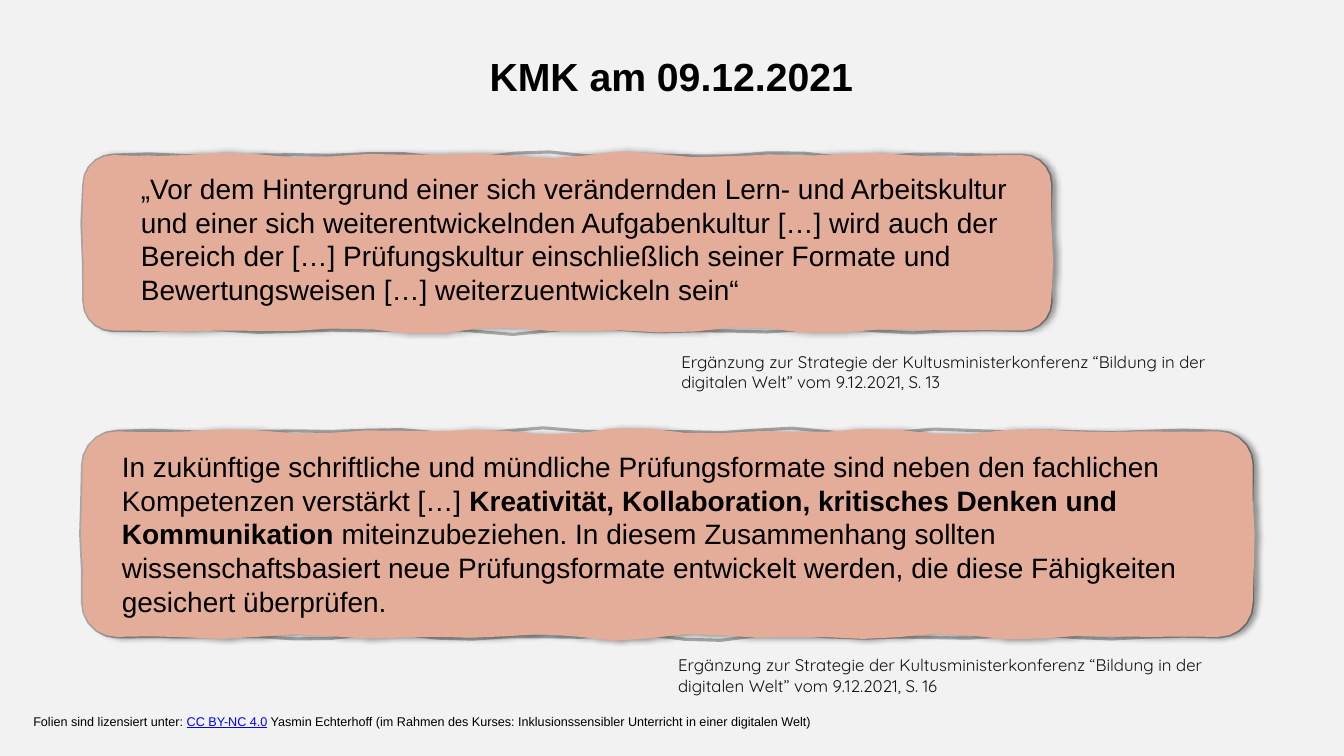
import math
from pptx import Presentation
from pptx import util as u
from pptx.dml.color import RGBColor
from pptx.enum import text
from pptx.oxml import parse_xml
from pptx.oxml.ns import nsdecls

COLORS = {"bg": "F2F2F2", "panel": "E3AD99", "edge": "A7A7A7",
          "ink": "000000", "source": "111111", "link": "0000FF"}

PANELS = [(2.11, 3.91, 24.38, 4.42), (2.08, 10.87, 29.49, 5.18)]
WOBBLES = {"edge": 0.4, "panel": 2.3}
EDGE_STEP = 0.9
ARC_STEPS = 5

FORMATS = {
    "title": {"name": "Arial", "size": u.Pt(28), "bold": True},
    "quote": {"name": "Arial", "size": u.Pt(20)},
    "source": {"name": "Quicksand", "size": u.Pt(12)},
    "license": {"name": "Arial", "size": u.Pt(9)},
}
INSETS = {"title": (0.25, 0.25), "license": (0, 0)}
DEFAULT_INSETS = (0.25, 0.13)
SOURCE = ("Ergänzung zur Strategie der Kultusministerkonferenz “Bildung in der "
          "digitalen Welt” vom 9.12.2021, S. ")

TEXTS = [
    ("title", (5.36, 1.07, 23.11, 2.01), [("KMK am 09.12.2021", "ink", {})]),
    ("quote", (3.3, 4.19, 22.45, 3.68), [
        ("„Vor dem Hintergrund einer sich verändernden Lern- und Arbeitskultur "
         "und einer sich weiterentwickelnden Aufgabenkultur […] wird auch der "
         "Bereich der […] Prüfungskultur einschließlich seiner Formate und "
         "Bewertungsweisen […] weiterzuentwickeln sein“", "ink", {})]),
    ("source", (16.92, 8.74, 15.16, 1.27), [(SOURCE + "13", "source", {})]),
    ("quote", (2.82, 11.2, 28.19, 4.52), [
        ("In zukünftige schriftliche und mündliche Prüfungsformate sind neben "
         "den fachlichen Kompetenzen verstärkt […] ", "ink", {}),
        ("Kreativität, Kollaboration, kritisches Denken und Kommunikation",
         "ink", {"bold": True}),
        (" miteinzubeziehen. In diesem Zusammenhang sollten "
         "wissenschaftsbasiert neue Prüfungsformate entwickelt werden, die "
         "diese Fähigkeiten gesichert überprüfen.", "ink", {})]),
    ("source", (16.84, 16.38, 15.16, 1.27), [(SOURCE + "16", "source", {})]),
    ("license", (0.84, 17.98, 28.63, 0.38), [
        ("Folien sind lizensiert unter: ", "ink", {}),
        ("CC BY-NC 4.0", "link", {"underline": True}),
        (" Yasmin Echterhoff (im Rahmen des Kurses: Inklusionssensibler "
         "Unterricht in einer digitalen Welt)", "ink", {})]),
]


def rgb(key):
    return RGBColor.from_string(COLORS[key])


def wobble(s, length, phase):
    taper = math.sin(math.pi * s / length) ** 0.5
    return 0.05 * taper * (math.sin(1.9 * s + phase) + math.sin(1.2 * s + 2 * phase))


def outline(left, top, width, height, phase):
    radius = height / 6
    right, bottom = left + width - radius, top + height - radius
    left, top = left + radius, top + radius
    points = []
    for side, (cx, cy) in enumerate([(right, top), (right, bottom),
                                     (left, bottom), (left, top)]):
        angle = math.pi / 2 * (side - 1)
        nx, ny = math.cos(angle), math.sin(angle)
        length = bottom - top if side % 2 else right - left
        steps = round(length / EDGE_STEP)
        for i in range(1, steps):
            s = length * i / steps
            out = radius + wobble(s, length, phase + side)
            points.append((cx + nx * out + ny * (length - s),
                           cy + ny * out - nx * (length - s)))
        for i in range(ARC_STEPS + 1):
            a = angle + math.pi / 2 * i / ARC_STEPS
            points.append((cx + radius * math.cos(a), cy + radius * math.sin(a)))
    return [(u.Cm(x), u.Cm(y)) for x, y in points]


def add_panel(slide, box, layer, phase):
    points = outline(*box, phase)
    builder = slide.shapes.build_freeform(*points[0])
    builder.add_line_segments(points[1:], close=True)
    sp = builder.convert_to_shape()
    sp.shadow.inherit = False
    if layer == "edge":
        sp.fill.background()
        sp.line.color.rgb = rgb("edge")
        sp.line.width = u.Pt(2.25)
    else:
        sp.fill.solid()
        sp.fill.fore_color.rgb = rgb("panel")
        sp.line.fill.background()
        effects = sp._element.spPr.find("{*}effectLst")
        effects.append(parse_xml(
            f'<a:outerShdw {nsdecls("a")} blurRad="{u.Pt(4)}" dist="{u.Pt(3)}" '
            'dir="0" algn="l" rotWithShape="0"><a:srgbClr val="000000">'
            '<a:alpha val="40000"/></a:srgbClr></a:outerShdw>'))


def add_text(slide, kind, box, runs):
    sp = slide.shapes.add_textbox(*map(u.Cm, box))
    tf = sp.text_frame
    side, end = map(u.Cm, INSETS.get(kind, DEFAULT_INSETS))
    frame = {"word_wrap": True, "margin_left": side, "margin_right": side,
             "margin_top": end, "margin_bottom": end}
    if kind != "title":
        frame["auto_size"] = text.MSO_AUTO_SIZE.SHAPE_TO_FIT_TEXT
    for name, value in frame.items():
        setattr(tf, name, value)
    p = tf.paragraphs[0]
    if kind == "title":
        p.alignment = text.PP_ALIGN.CENTER
    for words, color, extra in runs:
        r = p.add_run()
        r.text = words
        for name, value in {**FORMATS[kind], **extra}.items():
            setattr(r.font, name, value)
        r.font.color.rgb = rgb(color)


def main():
    prs = Presentation()
    prs.slide_width, prs.slide_height = u.Cm(33.87), u.Cm(19.05)
    slide = prs.slides.add_slide(prs.slide_layouts[6])
    slide.background.fill.solid()
    slide.background.fill.fore_color.rgb = rgb("bg")
    for box in PANELS:
        for layer, phase in WOBBLES.items():
            add_panel(slide, box, layer, phase)
    for kind, box, runs in TEXTS:
        add_text(slide, kind, box, runs)
    prs.save("out.pptx")


if __name__ == "__main__":
    main()
